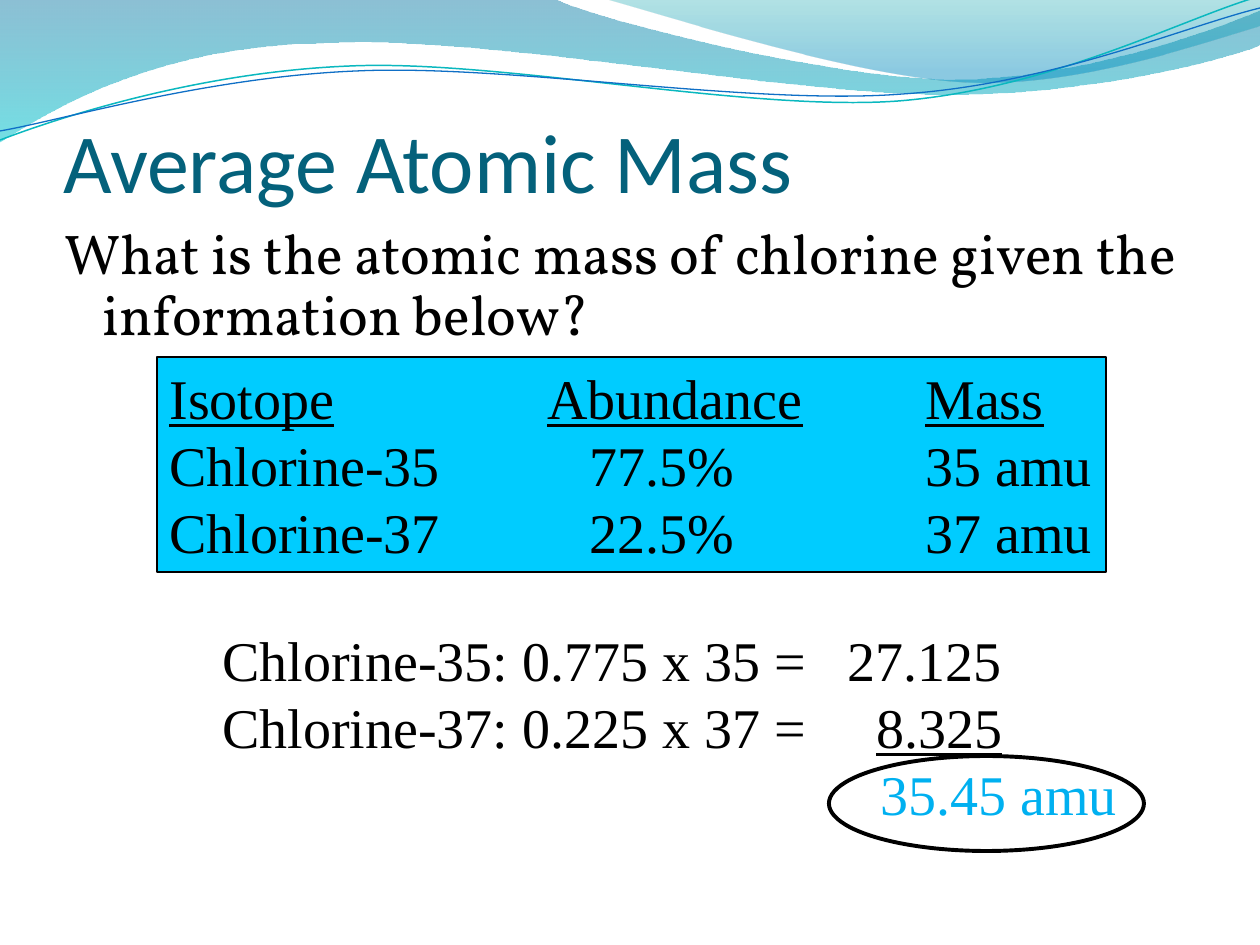
from lxml import etree
from pptx import Presentation
from pptx.dml.color import RGBColor
from pptx.enum.shapes import MSO_SHAPE
from pptx.enum.text import MSO_ANCHOR, MSO_AUTO_SIZE, PP_ALIGN
from pptx.oxml.ns import qn
from pptx.util import Pt

PX = 914400 // 126
RECT, OVAL = MSO_SHAPE.RECTANGLE, MSO_SHAPE.OVAL
TOP, BOTTOM, LEFT = MSO_ANCHOR.TOP, MSO_ANCHOR.BOTTOM, PP_ALIGN.LEFT
NO_FIT = MSO_AUTO_SIZE.NONE
rgb = RGBColor.from_string


def format_line(paragraph, face, size, color, stops=()):
    paragraph.alignment = LEFT
    paragraph.font.name = face
    paragraph.font.size = Pt(size)
    paragraph.font.color.rgb = rgb(color)
    if stops:
        tabs = etree.Element(qn("a:tabLst"))
        for pos in stops:
            etree.SubElement(tabs, qn("a:tab"), pos=str(pos * PX), algn="l")
        paragraph._p.get_or_add_pPr().insert(0, tabs)


def trace(shapes, start, segments, closed):
    points = [pair for segment in segments for pair in zip(segment[::2], segment[1::2])]
    builder = shapes.build_freeform(start[0], start[1], scale=PX)
    builder.add_line_segments(points, close=closed)
    outline = builder.convert_to_shape()
    outline.shadow.inherit = False
    steps = iter(list(outline._element.spPr.iter(qn("a:lnTo"))))
    for segment in segments:
        first = next(steps)
        if len(segment) == 6:
            curve = etree.Element(qn("a:cubicBezTo"))
            first.addprevious(curve)
            for step in (first, next(steps), next(steps)):
                curve.append(step[0])
                step.getparent().remove(step)
    return outline


prs = Presentation()
prs.slide_width, prs.slide_height = 1260 * PX, 945 * PX
slide = prs.slides.add_slide(prs.slide_layouts[1])
shapes = slide.shapes

waves = [
    ((0, 0), [(554, -1), (600, 21, 837, 79, 955, 79), (1075, 79, 1207, 33, 1260, 11),
              (1261, 45), (1239, 55, 1096, 96, 940, 94), (784, 94, 481, 35, 324, 43),
              (163, 45, 58, 105, -1, 142), (0, 0)],
     [(0, "0074A1", 45), (1, "00C6CF", 55)]),
    ((604, -1), [(659, 14, 859, 78, 969, 82), (1079, 87, 1211, 40, 1260, 26),
                 (1260, 0), (604, -1)],
     [(0, "00A1A9", 30), (0.8, "008BBF", 45)]),
]
for start, segments, tints in waves:
    wave = trace(shapes, start, segments, True)
    wave.line.fill.background()
    wave.fill.gradient()
    wave.fill.gradient_angle = 270
    for stop, (position, color, opacity) in zip(wave.fill.gradient_stops, tints):
        stop.position = position
        stop.color.rgb = rgb(color)
    for tint, (position, color, opacity) in zip(wave._element.spPr.iter(qn("a:srgbClr")), tints):
        etree.SubElement(tint, qn("a:alpha"), val=str(opacity * 1000))

ripples = [
    ((0, 140), [(60, 117, 199, 72, 349, 66), (498, 59, 747, 112, 898, 101),
                (1050, 89, 1182, 19, 1257, -3)], "0AB8BF", 0.85),
    ((0, 131), [(59, 121, 207, 77, 357, 71), (508, 64, 752, 106, 903, 94),
                (1053, 84, 1186, 26, 1260, 8)], "0F6FC6", 0.75),
]
for start, segments, color, weight in ripples:
    ripple = trace(shapes, start, segments, False)
    ripple.fill.background()
    ripple.line.color.rgb = rgb(color)
    ripple.line.width = Pt(weight)

title = shapes.title
title.left, title.top, title.width, title.height = 63 * PX, 53 * PX, 1134 * PX, 157 * PX
heading = title.text_frame
heading.auto_size = NO_FIT
heading.vertical_anchor = BOTTOM
heading.margin_left = heading.margin_right = heading.margin_bottom = 0
heading.margin_top = 6 * PX
heading.text = "Average Atomic Mass"
format_line(heading.paragraphs[0], "Calibri", 48, "04617B")

body = slide.placeholders[1]
body.left, body.top, body.width, body.height = 52 * PX, 220 * PX, 1176 * PX, 126 * PX
body.text_frame.auto_size = NO_FIT
body.text_frame.text = "What is the atomic mass of chlorine given the information below?"
question = body.text_frame.paragraphs[0]
format_line(question, "Vollkorn", 32, "000000")
question.line_spacing = 0.9
question.space_before = Pt(6.4)
indent = question._p.get_or_add_pPr()
indent.set("marL", str(38 * PX))
indent.set("indent", str(-38 * PX))
etree.SubElement(indent, qn("a:buNone"))

isotopes = shapes.add_shape(RECT, 157 * PX, 357 * PX, 949 * PX, 215 * PX)
isotopes.shadow.inherit = False
isotopes.fill.solid()
isotopes.fill.fore_color.rgb = rgb("00CCFF")
isotopes.line.color.rgb = rgb("000000")
isotopes.line.width = Pt(0.75)
isotopes.text_frame.vertical_anchor = TOP
isotopes.text_frame.margin_right = 0

working = shapes.add_textbox(210 * PX, 619 * PX, 929 * PX, 217 * PX)

texts = [
    (isotopes, [
        ([("Isotope\tAbundance\tMass", True)], [378, 756]),
        ([("Chlorine-35\t77.5%\t35 amu", False)], [420, 756]),
        ([("Chlorine-37\t22.5%\t37 amu", False)], [420, 756]),
    ]),
    (working, [
        ([("Chlorine-35: 0.775 x 35 =\t27.125", False)], [625]),
        ([("Chlorine-37: 0.225 x 37 =\t", False), ("8.325", True)], [654]),
        ([("\t", False), ("35.45 amu", False)], [658]),
    ]),
]
for box, rows in texts:
    frame = box.text_frame
    frame.word_wrap = True
    for number, (entries, stops) in enumerate(rows):
        row = frame.add_paragraph() if number else frame.paragraphs[0]
        format_line(row, "Times New Roman", 32, "000000", stops)
        for entry, underlined in entries:
            run = row.add_run()
            run.text = entry
            if underlined:
                run.font.underline = True

answer = working.text_frame.paragraphs[-1].runs[-1]
answer.font.color.rgb = rgb("00B0F0")

ring = shapes.add_shape(OVAL, 829 * PX, 756 * PX, 315 * PX, 95 * PX)
ring.shadow.inherit = False
ring.fill.background()
ring.line.color.rgb = rgb("000000")
ring.line.width = Pt(2.25)

prs.save("out.pptx")
